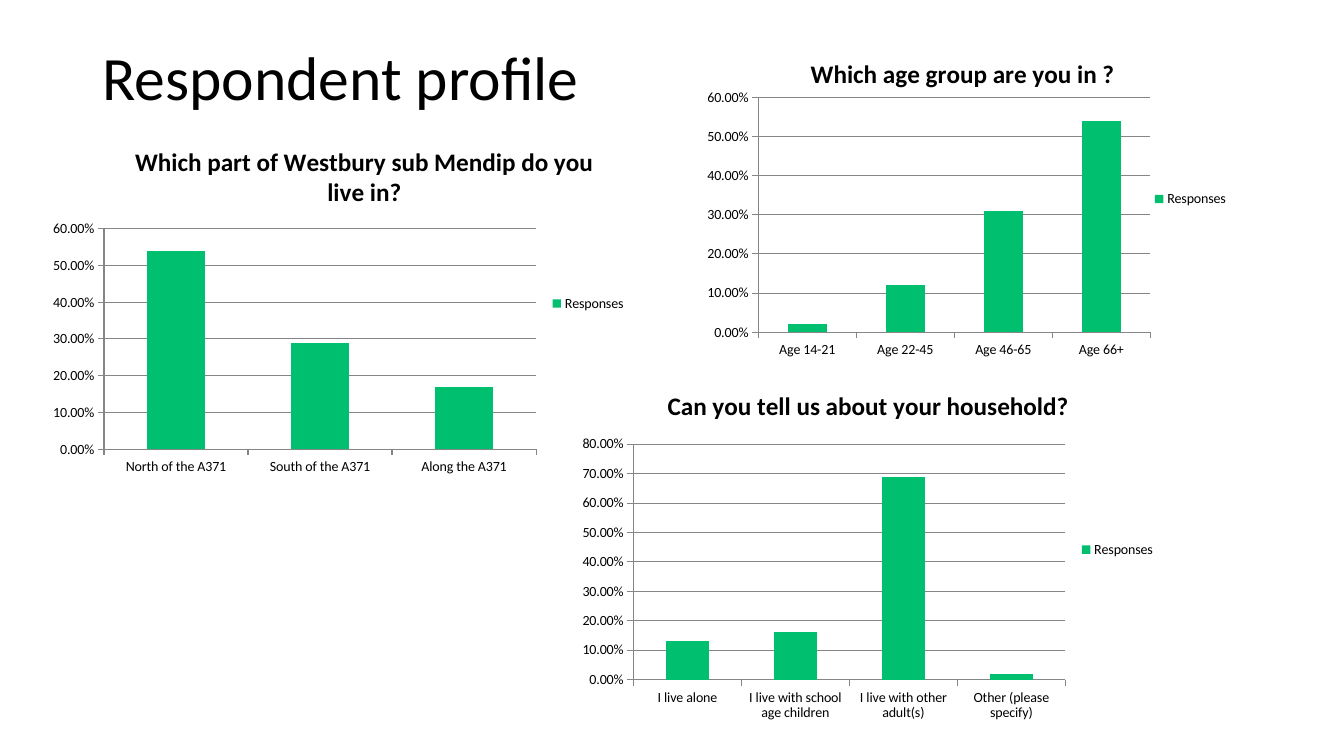
from lxml.etree import SubElement
from pptx import Presentation
from pptx.chart.data import CategoryChartData
from pptx.dml.color import RGBColor
from pptx.enum.chart import XL_CHART_TYPE, XL_LEGEND_POSITION, XL_TICK_MARK
from pptx.enum.text import MSO_ANCHOR
from pptx.oxml.ns import qn
from pptx.util import Cm, Pt

BLACK = RGBColor(0, 0, 0)
GREEN = RGBColor(0x00, 0xBF, 0x6F)
GREY = RGBColor(0x86, 0x86, 0x86)
FONT = "Calibri"


def set_font(font, size, bold=False):
    font.name = FONT
    font.size = Pt(size)
    font.bold = bold
    font.color.rgb = BLACK


def set_line(line):
    line.color.rgb = GREY
    line.width = Pt(0.75)


def add_title(slide, text, left, top, width, height):
    box = slide.shapes.add_textbox(Cm(left), Cm(top), Cm(width), Cm(height))
    frame = box.text_frame
    frame.word_wrap = True
    frame.vertical_anchor = MSO_ANCHOR.MIDDLE
    frame.text = text
    para = frame.paragraphs[0]
    para.line_spacing = 0.9
    set_font(para.runs[0].font, 44)


def place(part, index, **parts):
    """Give a chart part a manual layout, in fractions of the chart."""
    for old in part.findall(qn("c:layout")):
        part.remove(old)
    layout = SubElement(part, qn("c:layout"))
    part.insert(index, layout)
    manual = SubElement(layout, qn("c:manualLayout"))
    for tag, val in parts.items():
        SubElement(manual, qn("c:" + tag)).set("val", str(val))


def add_bars(slide, title, answers, left, top, width, height):
    data = CategoryChartData(number_format="0.00%")
    data.categories = list(answers)
    data.add_series("Responses", list(answers.values()))
    chart = slide.shapes.add_chart(
        XL_CHART_TYPE.COLUMN_CLUSTERED,
        Cm(left), Cm(top), Cm(width), Cm(height), data).chart
    set_font(chart.font, 10)

    chart.has_title = True
    frame = chart.chart_title.text_frame
    frame.text = title
    set_font(frame.paragraphs[0].runs[0].font, 18, True)
    chart.chart_title.include_in_layout = False

    chart.has_legend = True
    chart.legend.position = XL_LEGEND_POSITION.RIGHT
    chart.legend.include_in_layout = False

    plot = chart.plots[0]
    plot.gap_width = 150
    plot.vary_by_categories = False
    fill = plot.series[0].format.fill
    fill.solid()
    fill.fore_color.rgb = GREEN

    for axis in (chart.category_axis, chart.value_axis):
        axis.major_tick_mark = XL_TICK_MARK.OUTSIDE
        axis.minor_tick_mark = XL_TICK_MARK.NONE
        set_line(axis.format.line)
    axis = chart.value_axis
    axis.has_major_gridlines = True
    set_line(axis.major_gridlines.format.line)
    axis.tick_labels.number_format = "0.00%"
    axis.tick_labels.number_format_is_linked = False
    return chart


def main():
    deck = Presentation()
    deck.slide_width, deck.slide_height = Cm(33.87), Cm(19.05)
    slide = deck.slides.add_slide(deck.slide_layouts[6])
    add_title(slide, "Respondent profile", 2.33, 1.03, 29.21, 2)

    area = {"North of the A371": 0.54, "South of the A371": 0.29,
            "Along the A371": 0.17}
    chart = add_bars(slide, "Which part of Westbury sub Mendip do you live in?",
                     area, 1.04, 3.15, 15, 9)
    place(chart._chartSpace.chart.title, 1,
          xMode="edge", yMode="edge", x=0.15, y=0.04)

    ages = {"Age 14-21": 0.02, "Age 22-45": 0.12,
            "Age 46-65": 0.31, "Age 66+": 0.54}
    chart = add_bars(slide, "Which age group are you in ?",
                     ages, 17.3, 1.02, 13.92, 8)
    place(chart._chartSpace.chart.plotArea, 0, layoutTarget="inner",
          xMode="edge", yMode="edge", x=0.13, y=0.18, w=0.71, h=0.74)

    homes = {"I live alone": 0.13, "I live with school age children": 0.16,
             "I live with other adult(s)": 0.69,
             "Other (please specify)": 0.02}
    add_bars(slide, "Can you tell us about your household?",
             homes, 14.38, 9.35, 15, 9)
    deck.save("out.pptx")


if __name__ == "__main__":
    main()
